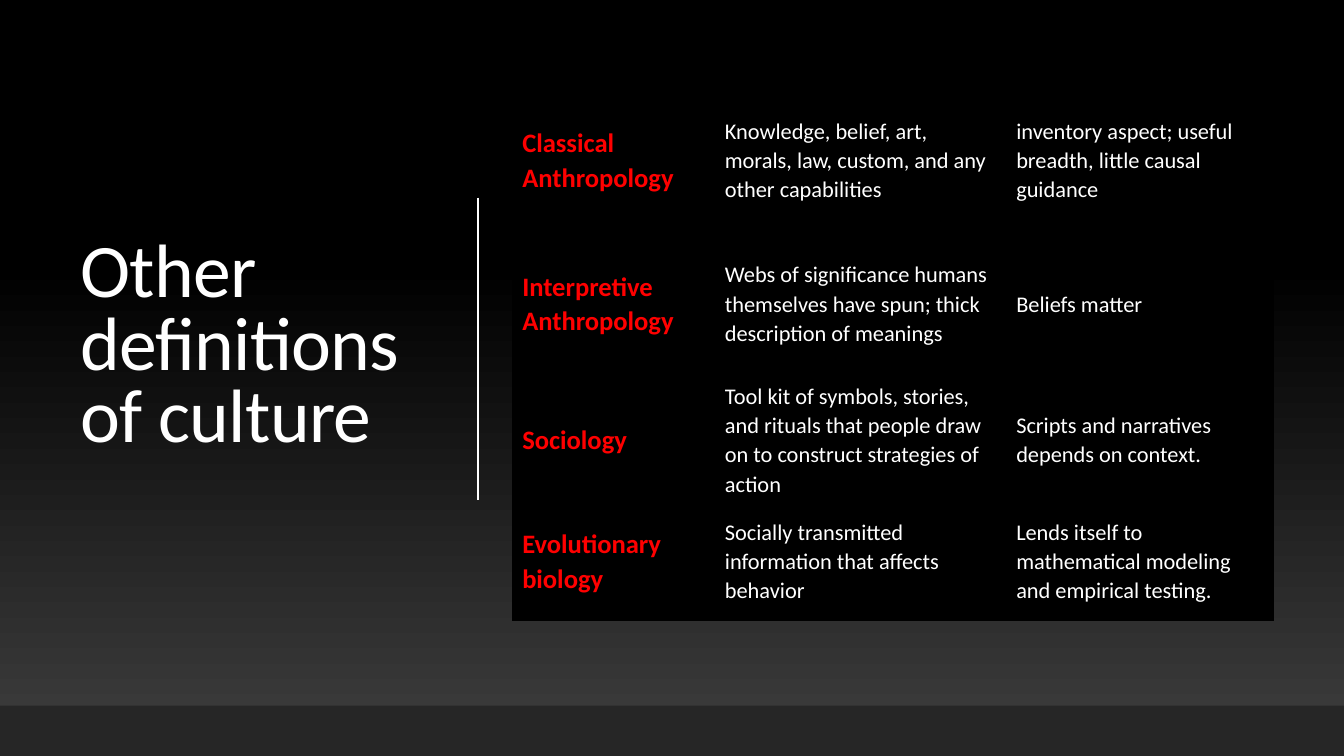
from pptx import Presentation
from pptx.dml.color import RGBColor
from pptx.enum.shapes import MSO_CONNECTOR, MSO_SHAPE
from pptx.enum.text import MSO_ANCHOR
from pptx.oxml.ns import qn
from pptx.util import Inches, Pt
from lxml import etree

BLACK = RGBColor(0x00, 0x00, 0x00)
CHARCOAL = RGBColor(0x3F, 0x3F, 0x3F)
FOOTER_GRAY = RGBColor(0x26, 0x26, 0x26)
WHITE = RGBColor(0xFF, 0xFF, 0xFF)
RED = RGBColor(0xFF, 0x00, 0x00)
FONT = "Calibri"
NO_STYLE_NO_GRID = "{2D5ABB26-0587-4C30-8999-92F81FD0307C}"

COLUMN_WIDTHS = (2.01, 2.89, 2.66)
ROW_HEIGHTS = (1.63, 1.35, 1.35, 1.06)
DEFINITIONS = (
    ("Classical Anthropology",
     "Knowledge, belief, art, morals, law, custom, and any other capabilities",
     "inventory aspect; useful breadth, little causal guidance"),
    ("Interpretive Anthropology",
     "Webs of significance humans themselves have spun; thick description of meanings",
     "Beliefs matter"),
    ("Sociology",
     "Tool kit of symbols, stories, and rituals that people draw on to construct strategies of action",
     "Scripts and narratives depends on context."),
    ("Evolutionary biology",
     "Socially transmitted information that affects behavior",
     "Lends itself to mathematical modeling and empirical testing."),
)


def fill_gradient(fill):
    """Fade from charcoal at the bottom edge to black at 65% of the height."""
    fill.gradient()
    fill.gradient_angle = 90
    for stop, position, color in zip(fill.gradient_stops, (0, 0.65), (CHARCOAL, BLACK)):
        stop.position = position
        stop.color.rgb = color


def add_band(slide, top, height):
    """Add a borderless rectangle as wide as the slide."""
    shape = slide.shapes.add_shape(
        MSO_SHAPE.RECTANGLE, 0, Inches(top), Inches(13.33), Inches(height))
    shape.shadow.inherit = False
    shape.line.fill.background()
    return shape


def style_paragraph(paragraph, size, color, bold, line_spacing):
    paragraph.line_spacing = line_spacing
    font = paragraph.font
    font.name = FONT
    font.size = Pt(size)
    font.bold = bold
    font.color.rgb = color


def add_title(slide, text):
    text_box = slide.shapes.add_textbox(Inches(0.7), Inches(0.69), Inches(3.69), Inches(5.53))
    text_frame = text_box.text_frame
    text_frame.word_wrap = True
    text_frame.vertical_anchor = MSO_ANCHOR.MIDDLE
    paragraph = text_frame.paragraphs[0]
    run = paragraph.add_run()
    run.text = text
    run._r.get_or_add_rPr().set("spc", "-50")
    style_paragraph(paragraph, 54, WHITE, False, 0.8)


def add_divider(slide):
    line = slide.shapes.add_connector(
        MSO_CONNECTOR.STRAIGHT, Inches(4.74), Inches(1.96), Inches(4.74), Inches(4.96))
    line.line.color.rgb = WHITE
    line.line.width = Pt(1)
    etree.SubElement(line._element.spPr, qn("a:effectLst"))


def fill_cell(cell, text, is_heading, top_margin):
    cell.fill.solid()
    cell.fill.fore_color.rgb = BLACK
    cell.vertical_anchor = MSO_ANCHOR.MIDDLE
    cell.margin_left = Inches(0.1)
    cell.margin_right = Inches(0.07)
    cell.margin_top = Inches(top_margin)
    cell.margin_bottom = Inches(0.14)
    cell.text = text
    paragraph = cell.text_frame.paragraphs[0]
    paragraph.space_after = Pt(8)
    size, color = (19, RED) if is_heading else (16, WHITE)
    style_paragraph(paragraph, size, color, is_heading, 1.07)


def add_definitions_table(slide):
    frame = slide.shapes.add_table(
        len(ROW_HEIGHTS), len(COLUMN_WIDTHS), Inches(5.08), Inches(0.77),
        Inches(sum(COLUMN_WIDTHS)), Inches(sum(ROW_HEIGHTS)))
    table = frame.table
    table.first_row = False
    table.horz_banding = False
    table._tbl.tblPr.find(qn("a:tableStyleId")).text = NO_STYLE_NO_GRID
    for column, width in zip(table.columns, COLUMN_WIDTHS):
        column.width = Inches(width)
    for row_index, (row, height) in enumerate(zip(table.rows, ROW_HEIGHTS)):
        row.height = Inches(height)
        top_margin = 0.14 if row_index == 0 else 0.01
        for column_index, text in enumerate(DEFINITIONS[row_index]):
            fill_cell(row.cells[column_index], text, column_index == 0, top_margin)


def main():
    presentation = Presentation()
    presentation.slide_width = Inches(13.33)
    presentation.slide_height = Inches(7.5)
    slide = presentation.slides.add_slide(presentation.slide_layouts[6])
    fill_gradient(slide.background.fill)
    fill_gradient(add_band(slide, 0, 7.5).fill)
    add_title(slide, "Other definitions of culture")
    add_divider(slide)
    footer = add_band(slide, 7, 0.5)
    footer.fill.solid()
    footer.fill.fore_color.rgb = FOOTER_GRAY
    add_definitions_table(slide)
    presentation.save("out.pptx")


if __name__ == "__main__":
    main()
